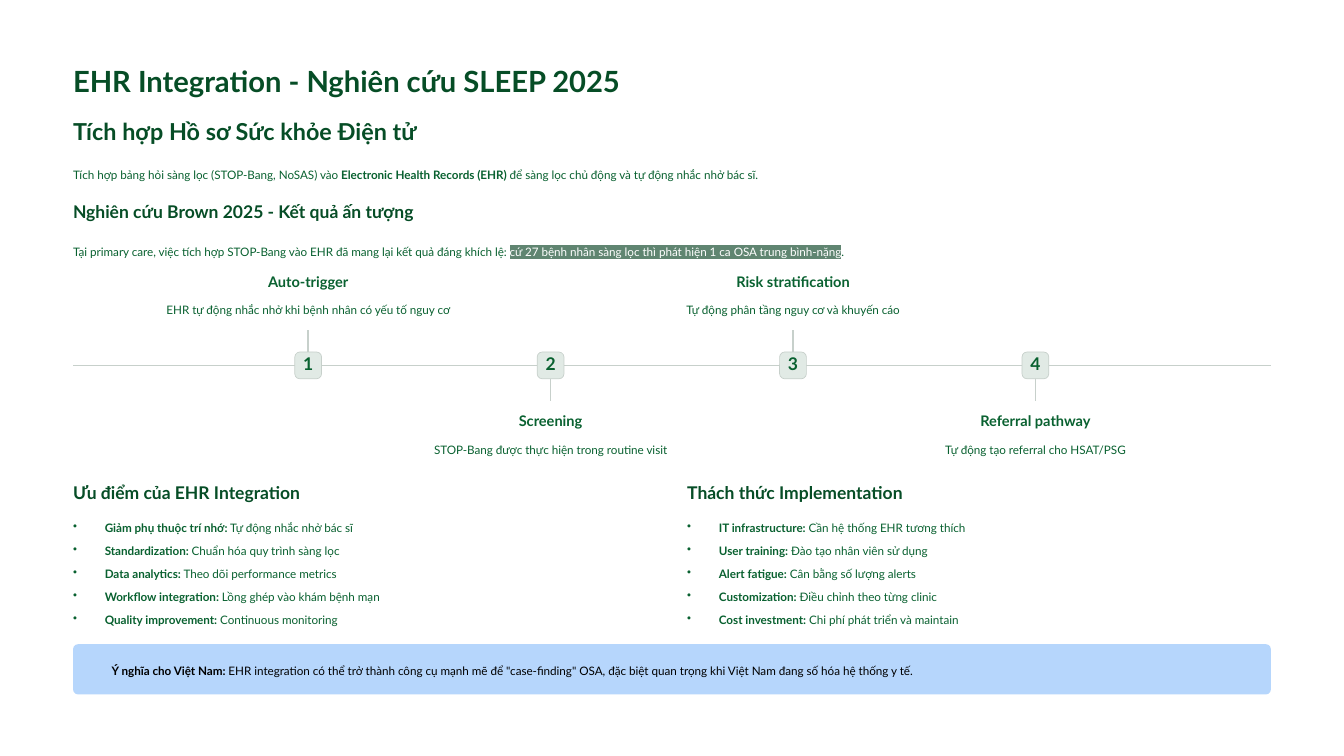
from lxml.etree import SubElement
from pptx import Presentation
from pptx.dml.color import RGBColor
from pptx.enum.shapes import MSO_CONNECTOR, MSO_SHAPE
from pptx.enum.text import MSO_ANCHOR, PP_ALIGN
from pptx.oxml.ns import qn
from pptx.util import Cm, Pt

DARK, GREEN, GREY, MINT = "064D26", "096130", "C7D0CB", "E1EAE5"
BLUE, MARK, WHITE, BLACK = "B6D6FC", "608571", "FFFFFF", "000000"
LEFT, WIDTH, COLUMN_GAP = 2.21, 36.22, 15.6
AXIS, FIRST_STEP, STEP_PITCH, BADGE, STEM = 11.05, 9.32, 7.33, 0.81, 1.07

# Heading: top, size, line height, text
HEADINGS = [
    (1.85, 25, 31.5, "EHR Integration - Nghiên cứu SLEEP 2025"),
    (3.51, 20, 25, "Tích hợp Hồ sơ Sức khỏe Điện tử"),
    (6.05, 15, 19, "Nghiên cứu Brown 2025 - Kết quả ấn tượng"),
]
BODY = [
    (4.95, [("Tích hợp bảng hỏi sàng lọc (STOP-Bang, NoSAS) vào ", ""),
            ("Electronic Health Records (EHR)", "bold"),
            (" để sàng lọc chủ động và tự động nhắc nhở bác sĩ.", "")]),
    (7.26, [("Tại primary care, việc tích hợp STOP-Bang vào EHR đã mang lại kết quả đáng khích lệ: ", ""),
            ("cứ 27 bệnh nhân sàng lọc thì phát hiện 1 ca OSA trung bình-nặng", "mark"),
            (".", "")]),
]
STEPS = [
    ("Auto-trigger", "EHR tự động nhắc nhở khi bệnh nhân có yếu tố nguy cơ"),
    ("Screening", "STOP-Bang được thực hiện trong routine visit"),
    ("Risk stratification", "Tự động phân tầng nguy cơ và khuyến cáo"),
    ("Referral pathway", "Tự động tạo referral cho HSAT/PSG"),
]
COLUMNS = [
    ("Ưu điểm của EHR Integration", [
        ("Giảm phụ thuộc trí nhớ:", " Tự động nhắc nhở bác sĩ"),
        ("Standardization:", " Chuẩn hóa quy trình sàng lọc"),
        ("Data analytics:", " Theo dõi performance metrics"),
        ("Workflow integration:", " Lồng ghép vào khám bệnh mạn"),
        ("Quality improvement:", " Continuous monitoring")]),
    ("Thách thức Implementation", [
        ("IT infrastructure:", " Cần hệ thống EHR tương thích"),
        ("User training:", " Đào tạo nhân viên sử dụng"),
        ("Alert fatigue:", " Cân bằng số lượng alerts"),
        ("Customization:", " Điều chỉnh theo từng clinic"),
        ("Cost investment:", " Chi phí phát triển và maintain")]),
]
MEANING = [
    ("Ý nghĩa cho Việt Nam:", "bold"),
    (' EHR integration có thể trở thành công cụ mạnh mẽ để "case-finding" OSA, '
     "đặc biệt quan trọng khi Việt Nam đang số hóa hệ thống y tế.", ""),
]


def paint(color_format, value):
    color_format.rgb = RGBColor.from_string(value)


def write(para, spans, size=10, line=16, color=GREEN, bold=None, align=PP_ALIGN.LEFT):
    """Fill a paragraph with (text, style) spans."""
    para.alignment, para.line_spacing = align, Pt(line)
    para.font.name, para.font.size, para.font.bold = "Lato", Pt(size), bold
    paint(para.font.color, color)
    for text, style in spans:
        span = para.add_run()
        span.text = text
        if style == "bold":
            span.font.bold = True
        if style == "mark":
            paint(span.font.color, WHITE)
            highlight = SubElement(span.font._element, qn("a:highlight"))
            SubElement(highlight, qn("a:srgbClr"), val=MARK)


def clear_margins(frame):
    frame.margin_left = frame.margin_right = frame.margin_top = frame.margin_bottom = 0
    frame.vertical_anchor = MSO_ANCHOR.TOP


def add_text(page, left, top, width, height):
    frame = page.shapes.add_textbox(Cm(left), Cm(top), Cm(width), Cm(height)).text_frame
    clear_margins(frame)
    frame.word_wrap = True
    return frame


def add_label(page, left, top, width, spans, line=16, **style):
    frame = add_text(page, left, top, width, line * 2.54 / 72)
    write(frame.paragraphs[0], spans, line=line, **style)


def add_heading(page, left, top, size, line, text):
    add_label(page, left, top, WIDTH / 2 - 1, [(text, "")], line, size=size, color=DARK, bold=True)


def add_panel(page, left, top, width, height, fill, corner):
    box = page.shapes.add_shape(MSO_SHAPE.ROUNDED_RECTANGLE, Cm(left), Cm(top), Cm(width), Cm(height))
    box.shadow.inherit = False
    box.adjustments[0] = corner
    box.fill.solid()
    paint(box.fill.fore_color, fill)
    box.line.fill.background()
    return box


def add_rule(page, x1, y1, x2, y2):
    rule = page.shapes.add_connector(MSO_CONNECTOR.STRAIGHT, Cm(x1), Cm(y1), Cm(x2), Cm(y2))
    rule.line.width = Pt(1.5)
    paint(rule.line.color, GREY)
    SubElement(rule._element.spPr, qn("a:effectLst"))
    return rule


def add_step(page, index, title, detail):
    center = FIRST_STEP + index * STEP_PITCH
    above = index % 2 == 0
    badge = add_panel(page, center - BADGE / 2, AXIS - BADGE / 2, BADGE, BADGE, MINT, 0.19)
    badge.line.width = Pt(0.6)
    badge.line.fill.solid()
    paint(badge.line.color, GREY)
    clear_margins(badge.text_frame)
    badge.text_frame.margin_top = Cm(0.08)
    write(badge.text_frame.paragraphs[0], [(str(index + 1), "")], 15, 15, bold=True, align=PP_ALIGN.CENTER)
    stem = add_rule(page, center, AXIS, center, AXIS - STEM if above else AXIS + STEM)
    stem.begin_connect(badge, 0 if above else 2)
    top = 8.23 if above else 12.45
    add_label(page, center - 3, top, 6, [(title, "")], 15.5, size=12.5, bold=True, align=PP_ALIGN.CENTER)
    add_label(page, center - 6.75, top + 0.79, 13.5, [(detail, "")], align=PP_ALIGN.CENTER)


def add_column(page, left, title, items):
    add_heading(page, left, 14.55, 15, 19, title)
    frame = add_text(page, left, 15.6, 17.68, 3.4)
    for index, (term, detail) in enumerate(items):
        para = frame.add_paragraph() if index else frame.paragraphs[0]
        write(para, [(term, "bold"), (detail, "")])
        para.space_after = Pt(3.8)
        properties = para._p.get_or_add_pPr()
        properties.set("marL", str(Cm(0.96)))
        properties.set("indent", str(-Cm(0.96)))
        bullet = SubElement(properties, qn("a:buChar"), char="•")
        properties.find(qn("a:defRPr")).addprevious(bullet)


def main():
    deck = Presentation()
    deck.slide_width, deck.slide_height = Cm(40.64), Cm(22.86)
    page = deck.slides.add_slide(deck.slide_layouts[6])
    page.background.fill.solid()
    paint(page.background.fill.fore_color, WHITE)
    for heading in HEADINGS:
        add_heading(page, LEFT, *heading)
    for top, spans in BODY:
        add_label(page, LEFT, top, WIDTH, spans)
    add_rule(page, LEFT, AXIS, LEFT + WIDTH, AXIS)
    for index, step in enumerate(STEPS):
        add_step(page, index, *step)
    for left, column in zip((LEFT, LEFT + WIDTH / 2 + 0.46), COLUMNS):
        add_column(page, left, *column)
    add_panel(page, LEFT, 19.48, WIDTH, 1.52, BLUE, 0.1)
    add_label(page, 3.38, 19.94, 34.7, MEANING, color=BLACK)
    deck.save("out.pptx")


if __name__ == "__main__":
    main()
